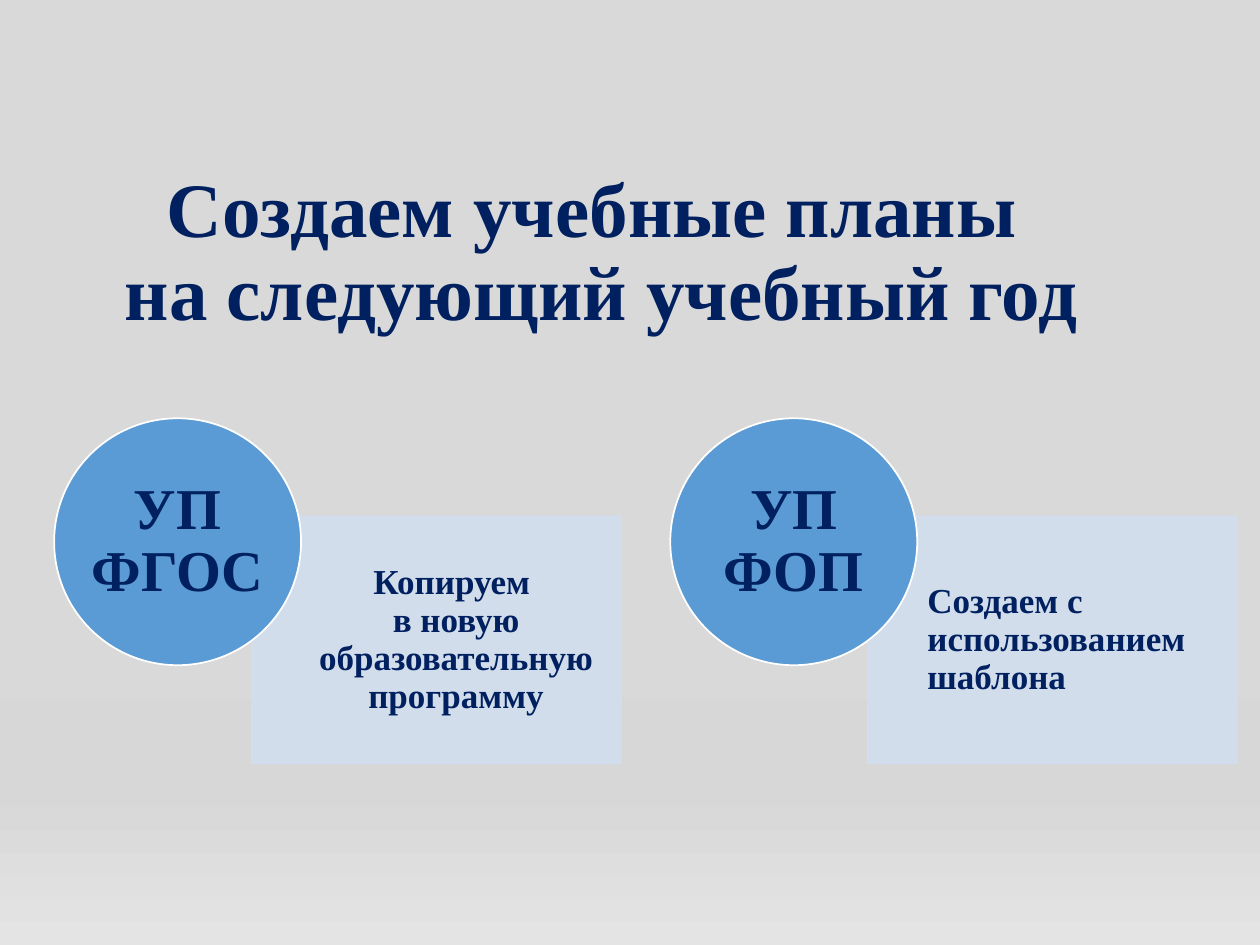
from dataclasses import dataclass

import pptx
import pptx.dml.color
import pptx.enum.shapes
import pptx.enum.text
import pptx.oxml
import pptx.oxml.ns
import pptx.util
from pptx.util import Inches

RGBColor = pptx.dml.color.RGBColor
ALIGN = pptx.enum.text.PP_ALIGN
SHAPE = pptx.enum.shapes.MSO_SHAPE

NAVY = RGBColor(0x00, 0x20, 0x60)
BLUE = RGBColor(0x5B, 0x9B, 0xD5)
PALE_BLUE = RGBColor(0xD2, 0xDE, 0xEF)
WHITE = RGBColor(0xFF, 0xFF, 0xFF)
BACKGROUND_STOPS = (
    (0, RGBColor(0xD9, 0xD9, 0xD9)),
    (74, RGBColor(0xD7, 0xD7, 0xD7)),
    (83, RGBColor(0xD7, 0xD7, 0xD7)),
    (100, RGBColor(0xE4, 0xE4, 0xE4)),
)

FONT = "Times New Roman"
CIRCLE_SIZE = 1.96
PANEL_WIDTH = 2.93
PANEL_OFFSET_X, PANEL_OFFSET_Y = 1.57, 0.78
FIRST_LEFT, PLAN_TOP, PLAN_STEP = 0.43, 3.32, 4.89


@dataclass
class Plan:
    label: str
    action: str
    alignment: ALIGN


PLANS = (
    Plan("УП ФГОС", "Копируем \vв новую образовательную программу", ALIGN.CENTER),
    Plan("УП ФОП", "Создаем с использованием шаблона", ALIGN.LEFT),
)


def paint_background(page: pptx.slide.Slide) -> None:
    fill = page.background.fill
    fill.gradient()
    fill.gradient_angle = 270
    stops = page.background._cSld.find(".//" + pptx.oxml.ns.qn("a:gsLst"))
    for stop in list(stops):
        stops.remove(stop)
    for percent, color in BACKGROUND_STOPS:
        stops.append(pptx.oxml.parse_xml(
            f'<a:gs {pptx.oxml.ns.nsdecls("a")} pos="{percent * 1000}">'
            f'<a:srgbClr val="{color}"/></a:gs>'))


def write(box, text: str, size: int, alignment: ALIGN, margins=(0, 0, 0, 0)) -> None:
    """Set bold navy text; margins are left, top, right, bottom in inches."""
    frame = box.text_frame
    frame.word_wrap = True
    frame.vertical_anchor = pptx.enum.text.MSO_ANCHOR.MIDDLE
    (frame.margin_left, frame.margin_top,
     frame.margin_right, frame.margin_bottom) = map(Inches, margins)
    para = frame.paragraphs[0]
    para.text = text
    para.alignment = alignment
    para.line_spacing = 0.9
    para.font.name = FONT
    para.font.size = pptx.util.Pt(size)
    para.font.bold = True
    para.font.color.rgb = NAVY


def add_filled(page: pptx.slide.Slide, kind: SHAPE, left: float, top: float,
               width: float, fill: RGBColor, line: RGBColor):
    shape = page.shapes.add_shape(
        kind, Inches(left), Inches(top), Inches(width), Inches(CIRCLE_SIZE))
    shape.shadow.inherit = False
    shape.fill.solid()
    shape.fill.fore_color.rgb = fill
    shape.line.color.rgb = line
    shape.line.width = pptx.util.Pt(1)
    return shape


def make_translucent(shape, percent: int) -> None:
    """Give the fill and the line of a shape the same opacity."""
    for color in shape._element.spPr.iter(pptx.oxml.ns.qn("a:srgbClr")):
        color.append(pptx.oxml.parse_xml(
            f'<a:alpha {pptx.oxml.ns.nsdecls("a")} val="{percent * 1000}"/>'))


def add_plan(page: pptx.slide.Slide, plan: Plan, left: float) -> None:
    panel = add_filled(page, SHAPE.RECTANGLE, left + PANEL_OFFSET_X,
                       PLAN_TOP + PANEL_OFFSET_Y, PANEL_WIDTH, PALE_BLUE, PALE_BLUE)
    make_translucent(panel, 90)
    write(panel, plan.action, 20, plan.alignment, (0.47, 0.16, 0.16, 0.16))
    circle = add_filled(page, SHAPE.OVAL, left, PLAN_TOP, CIRCLE_SIZE, BLUE, WHITE)
    write(circle, plan.label, 33, ALIGN.CENTER)


def main() -> None:
    deck = pptx.Presentation()
    deck.slide_width, deck.slide_height = Inches(10), Inches(7.5)
    page = deck.slides.add_slide(deck.slide_layouts[6])
    paint_background(page)
    title = page.shapes.add_textbox(
        Inches(0.61), Inches(1.3), Inches(8.33), Inches(1.43))
    write(title, "Создаем учебные планы \vна следующий учебный год", 44,
          ALIGN.CENTER, (0.1, 0.05, 0.1, 0.05))
    for index, plan in enumerate(PLANS):
        add_plan(page, plan, FIRST_LEFT + index * PLAN_STEP)
    deck.save("out.pptx")


if __name__ == "__main__":
    main()
